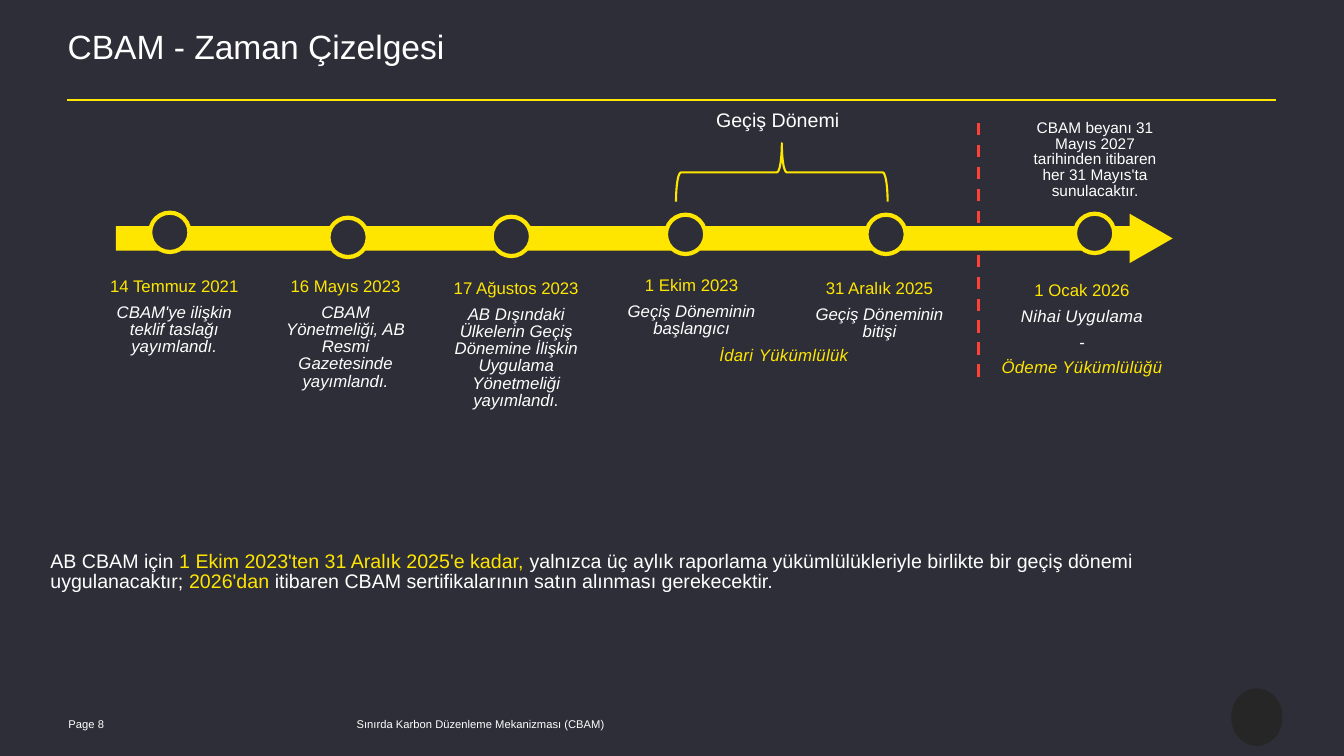
from dataclasses import dataclass

from lxml.etree import SubElement
from pptx import Presentation
from pptx.dml.color import RGBColor
from pptx.enum.dml import MSO_LINE_DASH_STYLE as Dash
from pptx.enum.shapes import MSO_CONNECTOR as Connector, MSO_SHAPE as Shape
from pptx.enum.text import MSO_ANCHOR as Anchor, MSO_AUTO_SIZE as AutoSize, PP_ALIGN as Align
from pptx.oxml.ns import qn
from pptx.util import Inches, Pt


@dataclass(frozen=True)
class Theme:
    font: str = "Arial"
    background: str = "2E2E38"
    accent: str = "FFE600"
    text: str = "FFFFFF"
    divider: str = "FF4136"
    badge: str = "262626"
    title: float = 24
    body: float = 14
    label: float = 12
    note: float = 11
    footer: float = 8


THEME = Theme()
DOT_SIZE = 0.39


def span(text, size=THEME.label, color=THEME.text, italic=False, spacing=0):
    """Return a piece of text with its format."""
    return text, size, color, italic, spacing


class SlideBuilder:
    """Draws themed elements on one slide."""

    def __init__(self, slide, theme):
        self.slide = slide
        self.theme = theme
        slide.background.fill.solid()
        slide.background.fill.fore_color.rgb = RGBColor.from_string(theme.background)

    def text(self, left, top, width, height, *paragraphs, align=Align.CENTER,
             anchor=Anchor.TOP, inset=0.04, leading=0.85, after=6, grow=True):
        box = self.slide.shapes.add_textbox(*map(Inches, (left, top, width, height)))
        frame = box.text_frame
        frame.word_wrap = True
        frame.auto_size = AutoSize.SHAPE_TO_FIT_TEXT if grow else AutoSize.NONE
        frame.vertical_anchor = anchor
        frame.margin_left = frame.margin_right = frame.margin_bottom = 0
        frame.margin_top = Inches(inset)
        for index, spans in enumerate(paragraphs):
            paragraph = frame.add_paragraph() if index else frame.paragraphs[0]
            paragraph.alignment = align
            paragraph.line_spacing = leading
            paragraph.space_after = Pt(after)
            for wording, size, color, italic, spacing in spans:
                run = paragraph.add_run()
                run.text = wording
                run.font.name = self.theme.font
                run.font.size = Pt(size)
                run.font.italic = italic
                run.font.color.rgb = RGBColor.from_string(color)
                if spacing:
                    run.font._element.set("spc", str(round(spacing * 100)))

    def shape(self, kind, left, top, width, height, fill=None, line=None, weight=1.5, rotation=0):
        shape = self.slide.shapes.add_shape(kind, *map(Inches, (left, top, width, height)))
        shape.shadow.inherit = False
        shape.rotation = rotation
        if fill:
            shape.fill.solid()
            shape.fill.fore_color.rgb = RGBColor.from_string(fill)
        else:
            shape.fill.background()
        if line:
            shape.line.color.rgb = RGBColor.from_string(line)
            shape.line.width = Pt(weight)
        else:
            shape.line.fill.background()
        return shape

    def line(self, x1, y1, x2, y2, color, weight, dash=None):
        line = self.slide.shapes.add_connector(
            Connector.STRAIGHT, *map(Inches, (x1, y1, x2, y2)))
        line.line.color.rgb = RGBColor.from_string(color)
        line.line.width = Pt(weight)
        if dash:
            line.line.dash_style = dash
        SubElement(line._element.spPr, qn("a:effectLst"))

    def milestone(self, dot, area, date, *details):
        self.shape(Shape.OVAL, *dot, DOT_SIZE, DOT_SIZE,
                   fill=self.theme.background, line=self.theme.accent, weight=3)
        self.text(*area, [span(date, color=self.theme.accent)],
                  *([detail] for detail in details))


def event(text, **fmt):
    """Return an italic milestone description."""
    return span(text, italic=True, **fmt)


MILESTONES = [
    ((1.49, 2.11), (1.02, 2.73, 1.42, 0.81), "14 Temmuz 2021",
     event("CBAM'ye ilişkin teklif taslağı yayımlandı.")),
    ((3.26, 2.16), (2.72, 2.73, 1.42, 0.98), "16 Mayıs 2023",
     event("CBAM Yönetmeliği, AB Resmi Gazetesinde yayımlandı.")),
    ((4.88, 2.15), (4.46, 2.75, 1.33, 1.33), "17 Ağustos 2023",
     event("AB Dışındaki Ülkelerin Geçiş Dönemine İlişkin Uygulama Yönetmeliği yayımlandı.")),
    ((6.61, 2.13), (6.2, 2.72, 1.33, 0.64), "1 Ekim 2023",
     event("Geçiş Döneminin başlangıcı")),
    ((8.6, 2.13), (7.97, 2.75, 1.52, 0.64), "31 Aralık 2025",
     event("Geçiş Döneminin bitişi")),
    ((10.67, 2.12), (9.84, 2.77, 1.8, 0.98), "1 Ocak 2026",
     event("Nihai Uygulama", spacing=0.2), event("-", spacing=0.2),
     event("Ödeme Yükümlülüğü", color=THEME.accent, spacing=0.2)),
]
SUMMARY = [
    ("AB CBAM için ", THEME.text),
    ("1 Ekim 2023'ten 31 Aralık 2025'e kadar,", THEME.accent),
    (" yalnızca üç aylık raporlama yükümlülükleriyle birlikte bir geçiş dönemi uygulanacaktır; ",
     THEME.text),
    ("2026'dan", THEME.accent),
    (" itibaren CBAM sertifikalarının satın alınması gerekecektir.", THEME.text),
]
FOOTERS = [
    (3.54, 3.38, "Sınırda Karbon Düzenleme Mekanizması (CBAM)"),
    (0.68, 0.73, "Page 8"),
]


def main():
    deck = Presentation()
    deck.slide_width, deck.slide_height = Inches(13.34), Inches(7.5)
    page = SlideBuilder(deck.slides.add_slide(deck.slide_layouts[6]), THEME)

    page.line(0.67, 0.99, 12.67, 0.99, THEME.accent, 1.5)
    page.text(0.67, 0.32, 12.01, 0.65, [span("CBAM - Zaman Çizelgesi", size=THEME.title)],
              align=Align.LEFT, inset=0, after=0, grow=False)
    for left, width, wording in FOOTERS:
        page.text(left, 7.08, width, 0.2, [span(wording, size=THEME.footer)], align=Align.LEFT,
                  anchor=Anchor.MIDDLE, inset=0, leading=1, after=0, grow=False)

    page.line(9.71, 1.22, 9.71, 3.75, THEME.divider, 2.25, Dash.DASH)
    timeline = page.shape(Shape.RIGHT_ARROW, 1.15, 2.12, 10.49, 0.49, fill=THEME.accent)
    timeline.adjustments[1] = 0.873
    page.shape(Shape.LEFT_BRACE, 7.47, 0.66, 0.58, 2.1, line=THEME.accent, rotation=90)
    page.text(6.82, 1.07, 1.8, 0.24, [span("Geçiş Dönemi", size=THEME.body)])
    for milestone in MILESTONES:
        page.milestone(*milestone)

    page.text(6.88, 3.39, 1.8, 0.24, [
        event("İdari", color=THEME.accent, spacing=0.2),
        span(" ", size=THEME.body),
        event("Yükümlülük", color=THEME.accent, spacing=0.2)])
    page.text(10.19, 1.16, 1.36, 0.83, [span(
        "CBAM beyanı 31 Mayıs 2027 tarihinden itibaren her 31 Mayıs'ta sunulacaktır.",
        size=THEME.note)])
    page.text(0.5, 5.44, 12.01, 0.44,
              [span(wording, size=THEME.body, color=color) for wording, color in SUMMARY],
              align=Align.LEFT)
    page.shape(Shape.OVAL, 12.22, 6.83, 0.51, 0.57, fill=THEME.badge)
    deck.save("out.pptx")


if __name__ == "__main__":
    main()
